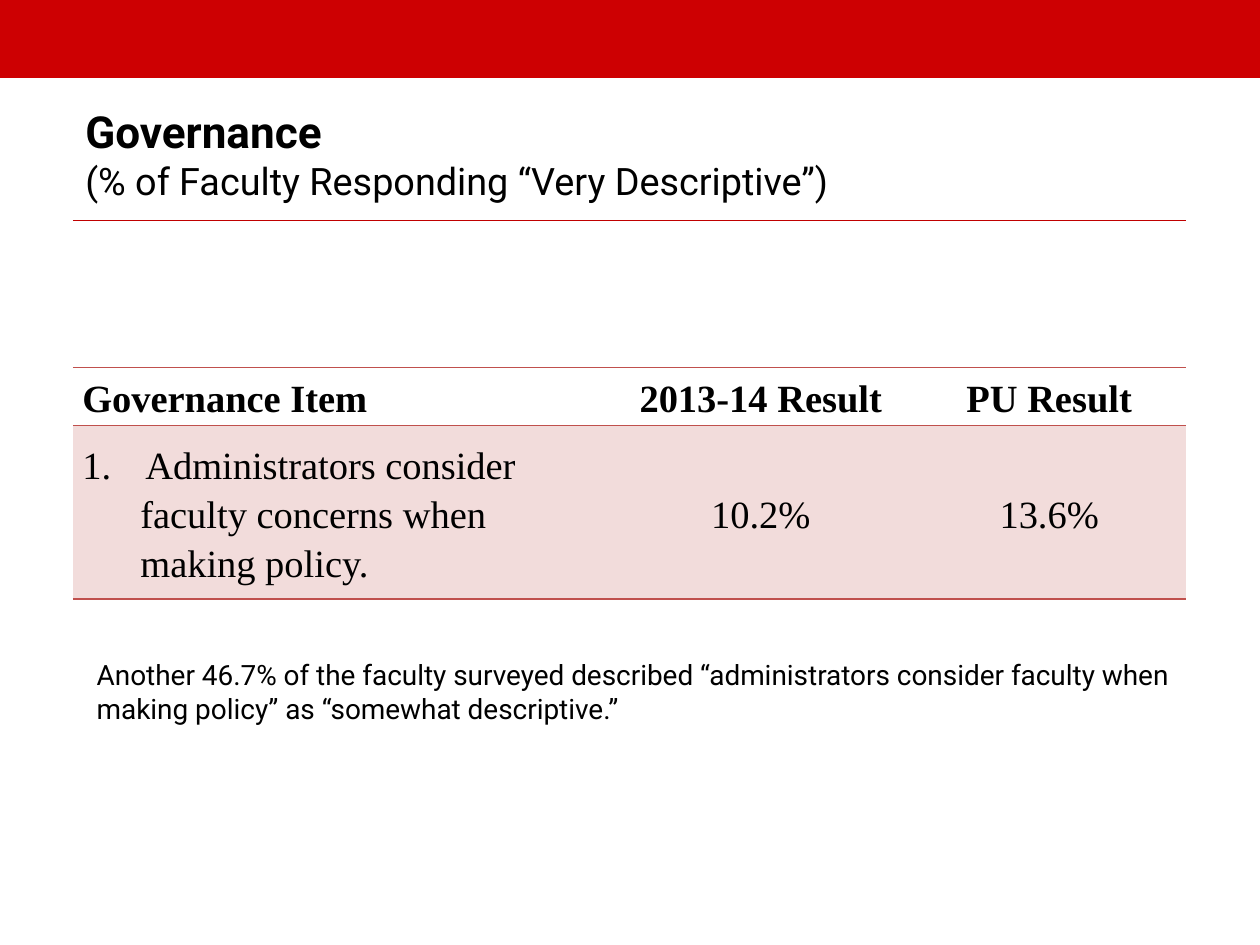
from dataclasses import dataclass

from lxml import etree
from pptx import Presentation
from pptx.dml.color import RGBColor
from pptx.enum.shapes import MSO_CONNECTOR, MSO_SHAPE
from pptx.enum.text import MSO_ANCHOR, PP_ALIGN
from pptx.oxml.ns import qn
from pptx.util import Cm, Pt

RECTANGLE = MSO_SHAPE.RECTANGLE
STRAIGHT = MSO_CONNECTOR.STRAIGHT
MIDDLE, TOP = MSO_ANCHOR.MIDDLE, MSO_ANCHOR.TOP
LEFT, CENTER = PP_ALIGN.LEFT, PP_ALIGN.CENTER
SANS, SERIF = "Roboto", "Times New Roman"
BLACK, BAND, RULE = "000000", "CD0002", "C00000"
ACCENT, TINT = "C0504D", "F2DCDB"
MARGIN, CONTENT_W = 1.47, 22.43
HANG, INDENT = 1.27, 1.17


@dataclass
class Column:
    """A table column with its heading and body lines."""
    width: float
    heading: str
    lines: list[str]
    align: PP_ALIGN = CENTER
    numbered: bool = False


@dataclass
class Line:
    """A line of text in a text box."""
    text: str
    size: float
    bold: bool = False


COLUMNS = [
    Column(10.8, "Governance Item",
           ["Administrators consider", "faculty concerns when", "making policy."], LEFT, True),
    Column(6.13, "2013-14 Result", ["10.2%"]),
    Column(5.5, "PU Result", ["13.6%"]),
]


def color(value: str) -> RGBColor:
    """Turn a hex string into a colour."""
    return RGBColor.from_string(value)


def set_font(font, name: str, size: float, bold: bool) -> None:
    """Set the typeface, size, weight and black colour."""
    font.name, font.size, font.bold = name, Pt(size), bold
    font.color.rgb = color(BLACK)


def add_text(s, left: float, top: float, width: float, height: float,
             lines: list[Line], anchor: MSO_ANCHOR) -> None:
    """Add a wrapped text box with one paragraph per line."""
    tf = s.shapes.add_textbox(Cm(left), Cm(top), Cm(width), Cm(height)).text_frame
    tf.word_wrap = True
    tf.vertical_anchor = anchor
    for i, line in enumerate(lines):
        p = tf.add_paragraph() if i else tf.paragraphs[0]
        p.text = line.text
        set_font(p.font, SANS, line.size, line.bold)


def add_rule(s, top: float) -> None:
    """Add a horizontal rule across the content width."""
    rule = s.shapes.add_connector(STRAIGHT, Cm(MARGIN), Cm(top), Cm(MARGIN + CONTENT_W), Cm(top))
    rule.line.color.rgb = color(RULE)
    rule.line.width = Pt(0.75)
    etree.SubElement(rule._element.spPr, qn("a:effectLst"))


def set_borders(cell, sides: str) -> None:
    """Draw the named sides of a cell and clear the others."""
    tc_pr = cell._tc.get_or_add_tcPr()
    for i, side in enumerate("LRTB"):
        ln = etree.Element(qn(f"a:ln{side}"), w=str(Pt(1)))
        if side in sides:
            fill = etree.SubElement(ln, qn("a:solidFill"))
            etree.SubElement(fill, qn("a:srgbClr"), val=ACCENT)
        else:
            etree.SubElement(ln, qn("a:noFill"))
        tc_pr.insert(i, ln)


def indent(p, margin: float, first: float = 0, numbered: bool = False) -> None:
    """Indent a paragraph and number it if asked."""
    p_pr = p._p.get_or_add_pPr()
    p_pr.set("marL", str(Cm(margin)))
    p_pr.set("indent", str(Cm(first)))
    if numbered:
        etree.SubElement(p_pr, qn("a:buFont"), typeface="+mj-lt")
        etree.SubElement(p_pr, qn("a:buAutoNum"), type="arabicPeriod")


def fill_cell(cell, lines: list[str], column: Column, header: bool) -> None:
    """Write and format one table cell."""
    if header:
        cell.fill.background()
    else:
        cell.fill.solid()
        cell.fill.fore_color.rgb = color(TINT)
    set_borders(cell, "TB")
    cell.vertical_anchor = MIDDLE
    cell.margin_left = cell.margin_right = Cm(0.19)
    cell.margin_top = cell.margin_bottom = 0
    tf = cell.text_frame
    for i, text in enumerate(lines):
        p = tf.add_paragraph() if i else tf.paragraphs[0]
        p.text = text
        p.alignment = column.align
        p.line_spacing = 1.15
        if column.numbered and not header:
            if i:
                indent(p, INDENT)
            else:
                indent(p, HANG, -HANG, True)
        set_font(p.font, SERIF, 22, header)


def add_results(s, top: float, row_heights: list[float]) -> None:
    """Add the table of survey results."""
    table = s.shapes.add_table(2, len(COLUMNS), Cm(MARGIN), Cm(top),
                               Cm(CONTENT_W), Cm(sum(row_heights))).table
    table.first_row = table.horz_banding = False
    for row, height in zip(table.rows, row_heights):
        row.height = Cm(height)
    for i, column in enumerate(COLUMNS):
        table.columns[i].width = Cm(column.width)
        fill_cell(table.cell(0, i), [column.heading], column, True)
        fill_cell(table.cell(1, i), column.lines, column, False)


def main() -> None:
    """Build and save the slide."""
    prs = Presentation()
    prs.slide_width, prs.slide_height = Cm(25.4), Cm(19.05)
    s = prs.slides.add_slide(prs.slide_layouts[6])
    band = s.shapes.add_shape(RECTANGLE, 0, 0, prs.slide_width, Cm(1.57))
    band.shadow.inherit = False
    band.fill.solid()
    band.fill.fore_color.rgb = color(BAND)
    band.line.fill.background()
    add_text(s, MARGIN, 1.98, 23.7, 2.24,
             [Line("Governance", 25.2, True),
              Line("(% of Faculty Responding “Very Descriptive”)", 21.6)], MIDDLE)
    add_rule(s, 4.45)
    add_results(s, 7.41, [1.17, 3.5])
    add_text(s, 1.7, 13.13, 22.23, 1.63,
             [Line("Another 46.7% of the faculty surveyed described “administrators consider "
                   "faculty when making policy” as “somewhat descriptive.”", 16)], TOP)
    prs.save("out.pptx")


if __name__ == "__main__":
    main()
